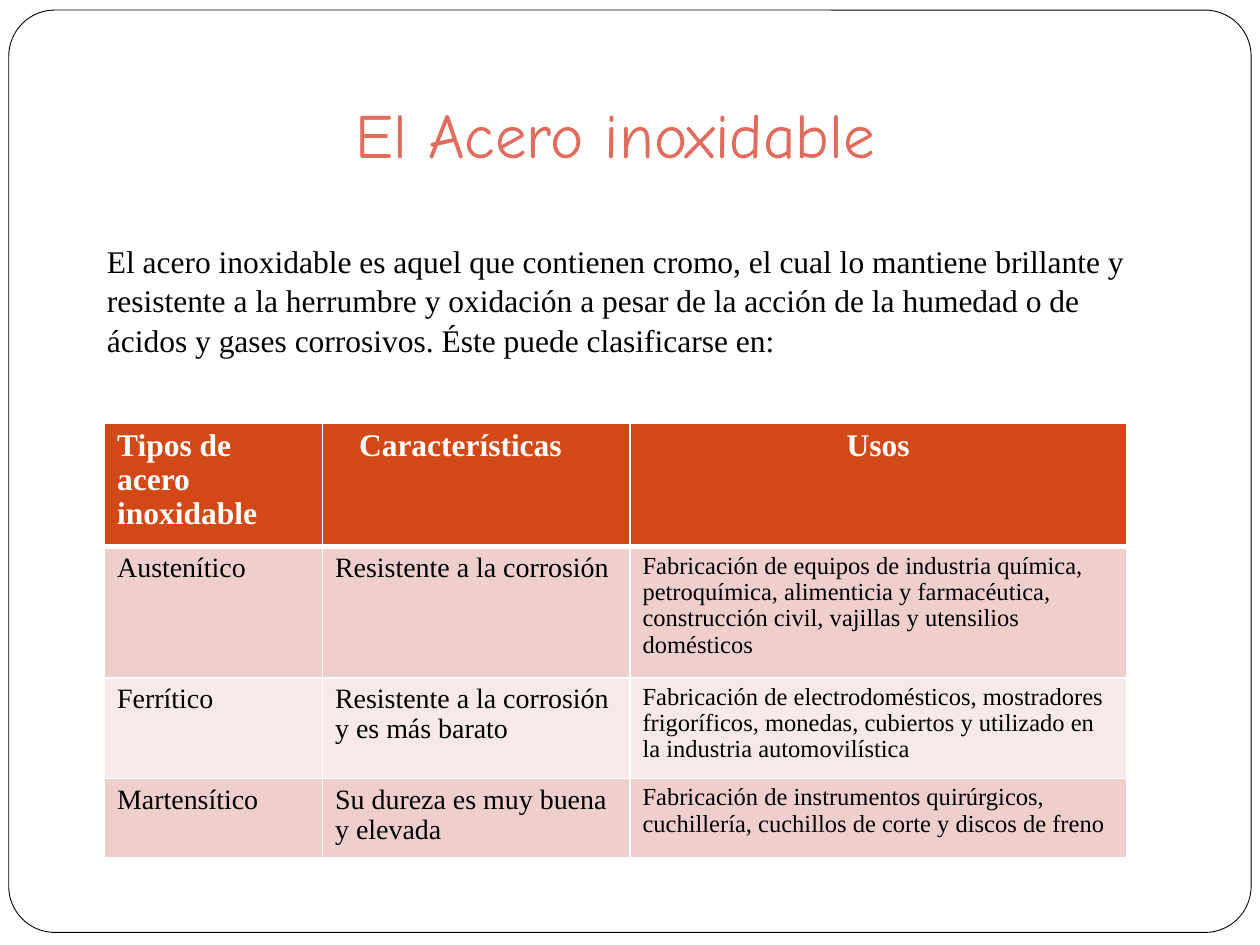
from lxml.etree import SubElement
from pptx import Presentation
from pptx.dml.color import RGBColor
from pptx.enum.shapes import MSO_SHAPE as Shape
from pptx.enum.text import MSO_ANCHOR as Anchor, PP_ALIGN as Align
from pptx.oxml.ns import qn
from pptx.util import Inches, Pt

# Content
TITLE = "El Acero inoxidable"
INTRO = (
    "El acero inoxidable es aquel que contienen cromo, el cual lo mantiene "
    "brillante y resistente a la herrumbre y oxidación a pesar de la acción "
    "de la humedad o de ácidos y gases corrosivos. Éste puede clasificarse en:"
)
STEELS = [
    ("Tipos de acero inoxidable", "Características", "Usos"),
    ("Austenítico", "Resistente a la corrosión",
     "Fabricación de equipos de industria química, petroquímica, alimenticia "
     "y farmacéutica, construcción civil, vajillas y utensilios domésticos"),
    ("Ferrítico", "Resistente a la corrosión y es más barato",
     "Fabricación de electrodomésticos, mostradores frigoríficos, monedas, "
     "cubiertos y utilizado en la industria automovilística"),
    ("Martensítico", "Su dureza es muy buena y elevada",
     "Fabricación de instrumentos quirúrgicos, cuchillería, cuchillos de "
     "corte y discos de freno"),
]
COLUMN_WIDTHS = [1.73, 2.44, 3.94]
ROW_HEIGHTS = [0.98, 1.04, 0.8, 0.63]

# Theme
THEME = {
    "title": {"name": "Comic Neue", "size": 36, "color": "DF6C5D", "bold": False},
    "intro": {"name": "Times New Roman", "size": 18, "color": "000000", "bold": False},
    "header": {"name": "Times New Roman", "size": 18, "color": "FFFFFF", "bold": True},
    "cell": {"name": "Times New Roman", "size": 16, "color": "000000", "bold": False},
    "uses": {"name": "Times New Roman", "size": 14, "color": "000000", "bold": False},
    "white": "FFFFFF",
    "frame": "000000",
    "header_fill": "D34817",
    "bands": ["F7E9E8", "EFCFCC"],
}


def rgb(value):
    return RGBColor.from_string(value)


def write(text_frame, text, style, align=Align.LEFT, spacing=1.0):
    para = text_frame.paragraphs[0]
    para.alignment = align
    para.line_spacing = spacing
    span = para.add_run()
    span.text = text
    form = THEME[style]
    for name, value in {"name": form["name"], "size": Pt(form["size"]),
                        "bold": form["bold"]}.items():
        setattr(span.font, name, value)
    span.font.color.rgb = rgb(form["color"])


def place(shape, left, top, width, height):
    for name, value in {"left": left, "top": top,
                        "width": width, "height": height}.items():
        setattr(shape, name, Inches(value))


def set_borders(cell, widths):
    """Draw white cell edges; they must come before the fill in the XML."""
    properties = cell._tc.get_or_add_tcPr()
    for position, (edge, points) in enumerate(widths.items()):
        line = SubElement(properties, qn(f"a:{edge}"), w=str(Pt(points)))
        fill = SubElement(line, qn("a:solidFill"))
        SubElement(fill, qn("a:srgbClr"), val=THEME["white"])
        properties.insert(position, line)


def add_frame(page):
    frame = page.shapes.add_shape(
        Shape.ROUNDED_RECTANGLE, Inches(0.07), Inches(0.08), Inches(9.86), Inches(7.32))
    frame.adjustments[0] = 0.05
    frame.shadow.inherit = False
    frame.fill.solid()
    frame.fill.fore_color.rgb = rgb(THEME["white"])
    frame.line.color.rgb = rgb(THEME["frame"])
    frame.line.width = Pt(0.5)
    # Keep the frame behind the title
    page.shapes._spTree.insert(2, frame._element)


def add_title(page):
    title = page.shapes.title
    place(title, 2.72, 0.21, 6.05, 1.25)
    title.text_frame.vertical_anchor = Anchor.BOTTOM
    title.text_frame.margin_bottom = Inches(0.1)
    write(title.text_frame, TITLE, "title")


def add_intro(page):
    box = page.shapes.add_textbox(Inches(0.75), Inches(1.86), Inches(8.35), Inches(1.01))
    box.text_frame.word_wrap = True
    write(box.text_frame, INTRO, "intro", spacing=1.04)


def add_steel_table(page):
    table = page.shapes.add_table(
        len(STEELS), len(COLUMN_WIDTHS), Inches(0.83), Inches(3.36),
        Inches(sum(COLUMN_WIDTHS)), Inches(sum(ROW_HEIGHTS))).table
    for column, width in zip(table.columns, COLUMN_WIDTHS):
        column.width = Inches(width)
    for row, height in zip(table.rows, ROW_HEIGHTS):
        row.height = Inches(height)

    for r, row in enumerate(STEELS):
        for c, text in enumerate(row):
            cell = table.cell(r, c)
            header = r == 0
            style = "header" if header else "uses" if c == 2 else "cell"
            align = Align.CENTER if header and c == 2 else Align.LEFT
            write(cell.text_frame, text, style, align, spacing=0.97)
            if header and c == 1:
                cell.margin_left = Inches(0.29)
            cell.fill.solid()
            cell.fill.fore_color.rgb = rgb(
                THEME["header_fill"] if header else THEME["bands"][r % 2])
            set_borders(cell, {"lnL": 1, "lnR": 1, "lnT": 3 if r == 1 else 1,
                               "lnB": 3 if header else 1})


def main():
    deck = Presentation()
    deck.slide_width, deck.slide_height = Inches(10), Inches(7.5)
    page = deck.slides.add_slide(deck.slide_layouts[5])
    add_frame(page)
    add_title(page)
    add_intro(page)
    add_steel_table(page)
    deck.save("out.pptx")


if __name__ == "__main__":
    main()
